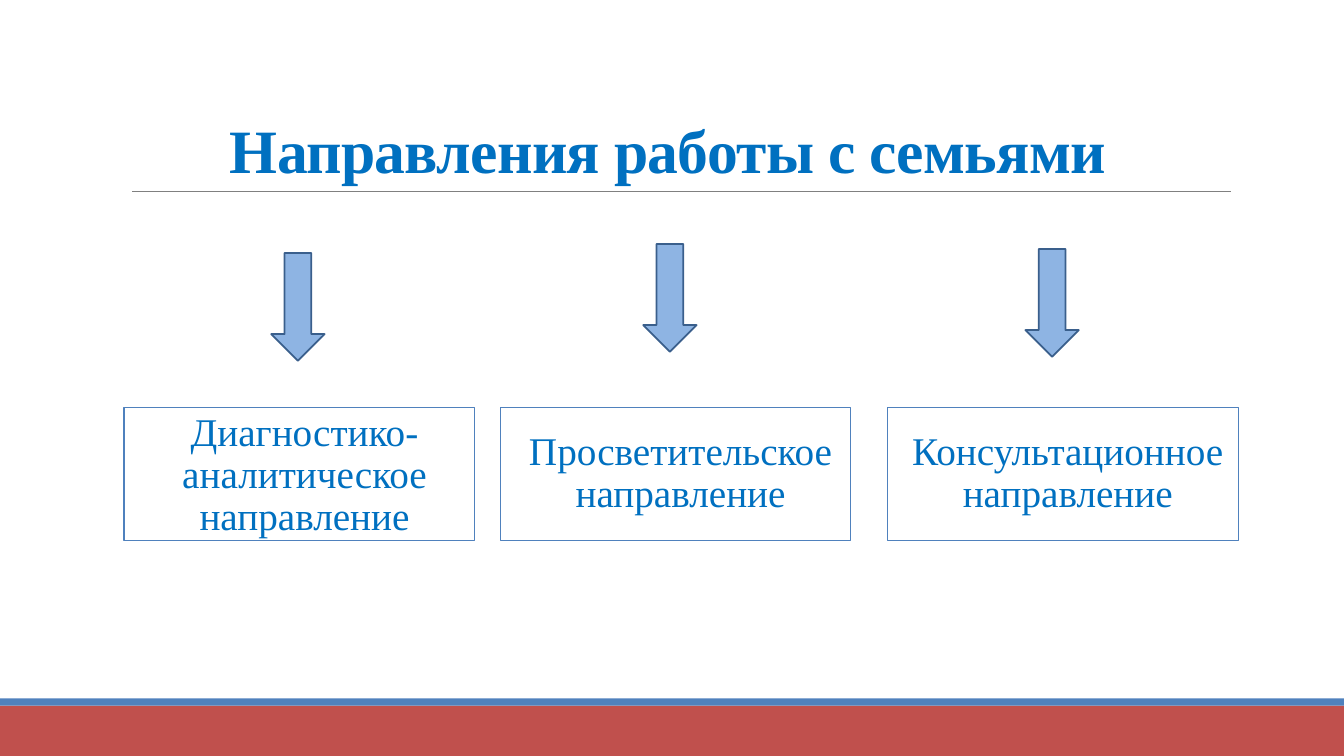
from pptx import Presentation
from pptx.dml.color import RGBColor
from pptx.enum.shapes import MSO_CONNECTOR, MSO_SHAPE
from pptx.enum.text import MSO_ANCHOR, PP_ALIGN
from pptx.oxml.ns import qn
from pptx.util import Inches, Pt
from lxml.etree import SubElement

COLORS = {
    "text": "0070C0",
    "blue": "4F81BD",
    "red": "C0504D",
    "rule": "808080",
    "arrow": "8EB4E3",
    "arrow_edge": "3A5F8C",
}
FONT = "Times New Roman"
DIRECTIONS = [
    # text, box left, arrow left, arrow top, anchor
    ("Диагностико-аналитическое направление", 1.23, 2.69, 2.51, MSO_ANCHOR.TOP),
    ("Просветительское направление", 4.96, 6.38, 2.42, MSO_ANCHOR.MIDDLE),
    ("Консультационное направление", 8.8, 10.17, 2.47, MSO_ANCHOR.MIDDLE),
]


def color(name):
    return RGBColor.from_string(COLORS[name])


def write_text(frame, text, size, anchor, bold=False, line_spacing=1.0,
               before=0, after=0, indent=0, tracking=None):
    """Fill a text frame with one centred paragraph; tracking is in points."""
    frame.word_wrap = True
    frame.vertical_anchor = anchor
    para = frame.paragraphs[0]
    para.alignment = PP_ALIGN.CENTER
    para.line_spacing = line_spacing
    para.space_before, para.space_after = Pt(before), Pt(after)
    if indent:
        para._p.get_or_add_pPr().set("marL", str(Inches(indent)))
    span = para.add_run()
    span.text = text
    span.font.name = FONT
    span.font.size = Pt(size)
    span.font.bold = bold
    span.font.color.rgb = color("text")
    if tracking is not None:
        span.font._element.set("spc", str(round(tracking * 100)))


class SlideBuilder:
    """Holds the colours and font in use together with the current slide."""

    def __init__(self, deck):
        self.page = deck.slides.add_slide(deck.slide_layouts[5])

    def title(self, text, left, top, width, height):
        box = self.page.shapes.title
        box.left, box.top = Inches(left), Inches(top)
        box.width, box.height = Inches(width), Inches(height)
        write_text(box.text_frame, text, 44, MSO_ANCHOR.BOTTOM, bold=True,
                   line_spacing=0.85, tracking=-0.5)

    def shape(self, kind, left, top, width, height, fill=None, line=None, weight=0.75):
        shape = self.page.shapes.add_shape(
            kind, Inches(left), Inches(top), Inches(width), Inches(height))
        shape.shadow.inherit = False
        if fill:
            shape.fill.solid()
            shape.fill.fore_color.rgb = color(fill)
        else:
            shape.fill.background()
        if line:
            shape.line.color.rgb = color(line)
            shape.line.width = Pt(weight)
        else:
            shape.line.fill.background()
        return shape

    def rule(self, left, right, top):
        rule = self.page.shapes.add_connector(
            MSO_CONNECTOR.STRAIGHT, Inches(left), Inches(top), Inches(right), Inches(top))
        rule.line.color.rgb = color("rule")
        rule.line.width = Pt(0.5)
        SubElement(rule._element.spPr, qn("a:effectLst"))

    def direction_box(self, text, left, anchor):
        box = self.shape(MSO_SHAPE.RECTANGLE, left, 4.04, 3.48, 1.32, line="blue")
        frame = box.text_frame
        frame.margin_left = frame.margin_right = 0
        frame.margin_top = frame.margin_bottom = Inches(0.05)
        write_text(frame, text, 28, anchor, line_spacing=0.9,
                   before=12, after=2, indent=0.1)

    def down_arrow(self, left, top):
        self.shape(MSO_SHAPE.DOWN_ARROW, left, top, 0.53, 1.07,
                   fill="arrow", line="arrow_edge", weight=1.25)


def main():
    deck = Presentation()
    deck.slide_width, deck.slide_height = Inches(13.33), Inches(7.5)
    slide = SlideBuilder(deck)
    slide.shape(MSO_SHAPE.RECTANGLE, 0, 7, 13.33, 0.5, fill="red")
    slide.shape(MSO_SHAPE.RECTANGLE, 0, 6.93, 13.33, 0.07, fill="blue")
    slide.rule(1.31, 12.21, 1.9)
    slide.title("Направления работы с семьями ", 1.2, 0.31, 11, 1.59)
    for text, box_left, arrow_left, arrow_top, anchor in DIRECTIONS:
        slide.direction_box(text, box_left, anchor)
        slide.down_arrow(arrow_left, arrow_top)
    deck.save("out.pptx")


if __name__ == "__main__":
    main()
